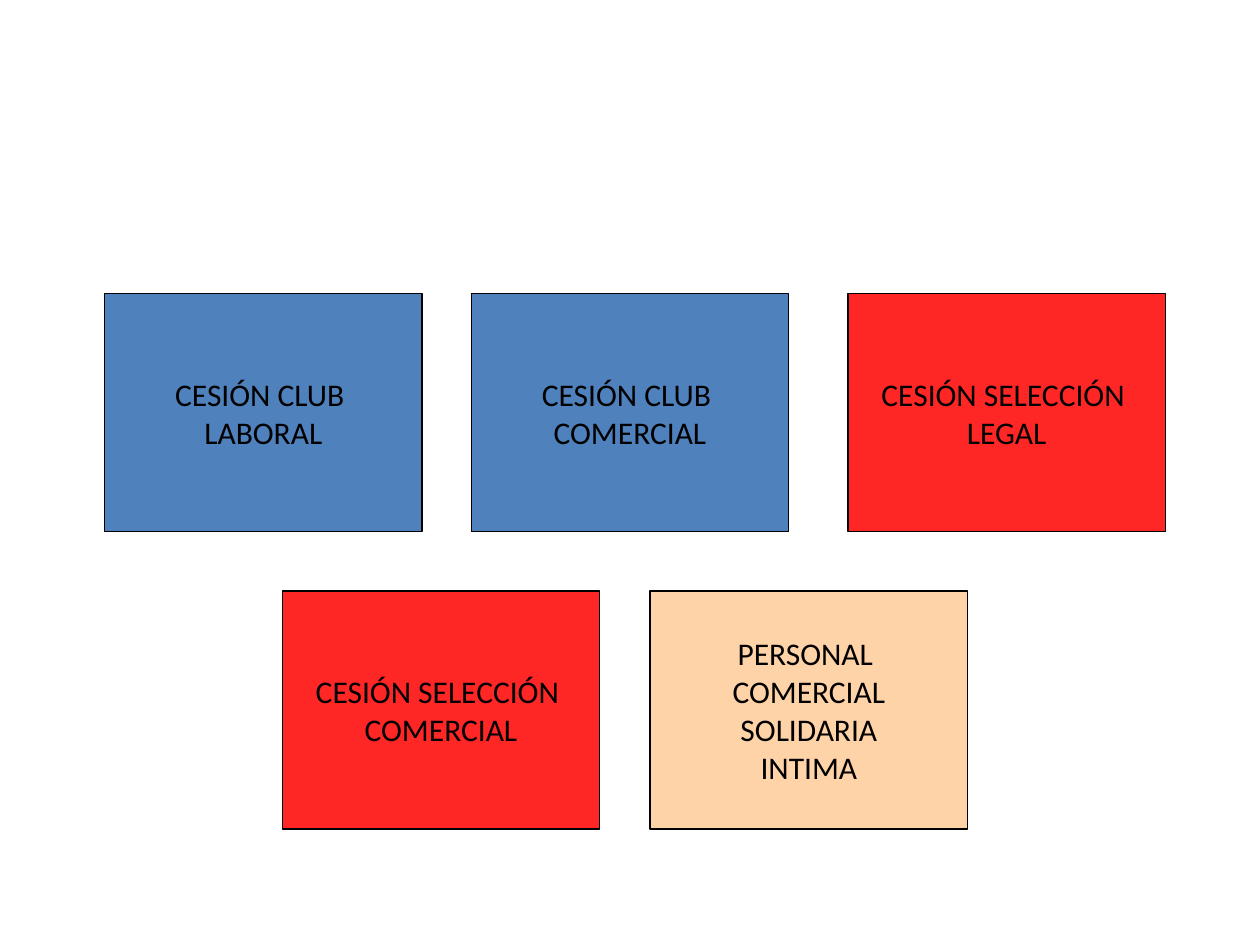
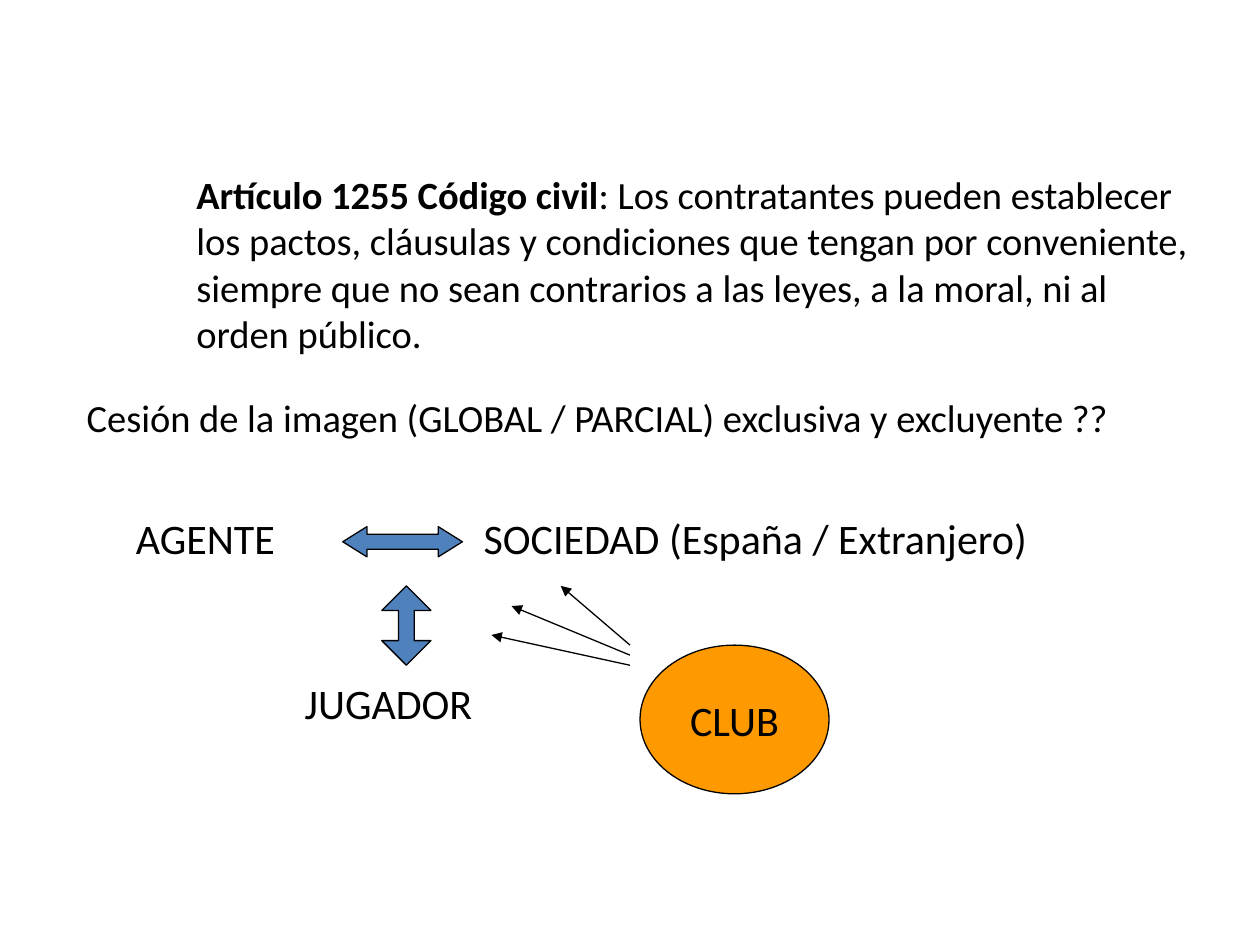
from dataclasses import dataclass

from lxml import etree
from pptx import Presentation
from pptx.dml.color import RGBColor
from pptx.enum import shapes, text
from pptx.oxml import ns
from pptx.util import Inches, Pt


@dataclass(frozen=True)
class Theme:
    font: str = "Calibri"
    ink: str = "000000"
    blue: str = "4F81BD"
    red: str = "FF0000"
    peach: str = "FFCC99"
    orange: str = "FF9900"
    card_size: int = 18
    body_size: int = 22
    label_size: int = 24
    line_width: float = 0.75
    tint_alpha: int = 85


THEME = Theme()
CENTER = text.PP_ALIGN.CENTER
SHAPE = shapes.MSO_SHAPE
CARD_WIDTH, CARD_HEIGHT = 2.52, 1.89


def write(frame, paragraphs, size, align=None):
    """Fill a frame; each paragraph is a list of (text, bold) spans."""
    for index, spans in enumerate(paragraphs):
        para = frame.paragraphs[0] if index == 0 else frame.add_paragraph()
        para.alignment = align
        for words, bold in spans:
            span = para.add_run()
            span.text = words
            font_format = {"name": THEME.font, "size": Pt(size), "bold": bold}
            for key, value in font_format.items():
                setattr(span.font, key, value)
            span.font.color.rgb = RGBColor.from_string(THEME.ink)


def set_outline(item):
    item.line.color.rgb = RGBColor.from_string(THEME.ink)
    item.line.width = Pt(THEME.line_width)


def add_figure(page, kind, box, fill, alpha=100, lines=(), size=THEME.card_size):
    """Add an outlined preset shape with optional centred lines of text."""
    figure = page.shapes.add_shape(kind, *map(Inches, box))
    figure.shadow.inherit = False
    figure.fill.solid()
    figure.fill.fore_color.rgb = RGBColor.from_string(fill)
    if alpha < 100:
        color = figure.fill._xPr.find(f".//{ns.qn('a:srgbClr')}")
        etree.SubElement(color, ns.qn("a:alpha"), val=str(alpha * 1000))
    set_outline(figure)
    if lines:
        frame = figure.text_frame
        frame.word_wrap = False
        frame.vertical_anchor = text.MSO_ANCHOR.MIDDLE
        write(frame, [[(line, False)] for line in lines], size, CENTER)
    return figure


def add_text(page, box, spans, size):
    textbox = page.shapes.add_textbox(*map(Inches, box))
    textbox.text_frame.word_wrap = True
    textbox.text_frame.auto_size = text.MSO_AUTO_SIZE.SHAPE_TO_FIT_TEXT
    write(textbox.text_frame, [spans], size)


def add_arrow(page, start, end):
    arrow = page.shapes.add_connector(
        shapes.MSO_CONNECTOR.STRAIGHT, *map(Inches, (*start, *end)))
    set_outline(arrow)
    etree.SubElement(arrow.line._get_or_add_ln(), ns.qn("a:tailEnd"), type="triangle")
    etree.SubElement(arrow._element.spPr, ns.qn("a:effectLst"))


def add_card_row(page, top, cards):
    for left, fill, alpha, lines in cards:
        add_figure(page, SHAPE.RECTANGLE, (left, top, CARD_WIDTH, CARD_HEIGHT),
                   fill, alpha, lines)


def build_assignments(page):
    tint = THEME.tint_alpha
    add_card_row(page, 2.33, [
        (0.83, THEME.blue, 100, ["CESIÓN CLUB ", "LABORAL"]),
        (3.74, THEME.blue, 100, ["CESIÓN CLUB ", "COMERCIAL"]),
        (6.73, THEME.red, tint, ["CESIÓN SELECCIÓN ", "LEGAL"]),
    ])
    add_card_row(page, 4.69, [
        (2.24, THEME.red, tint, ["CESIÓN SELECCIÓN ", "COMERCIAL"]),
        (5.16, THEME.peach, tint,
         ["PERSONAL ", "COMERCIAL", "SOLIDARIA", "INTIMA"]),
    ])


def add_legal_basis(page, left, top):
    add_text(page, (left + 0.87, top, 8.19, 1.58), [
        ("Artículo 1255 Código civil", True),
        (": Los contratantes pueden establecer los pactos, cláusulas y condiciones "
         "que tengan por conveniente, siempre que no sean contrarios a las leyes, "
         "a la moral, ni al orden público.", False),
    ], THEME.body_size)
    add_text(page, (left, top + 1.77, 9.06, 0.47), [
        ("Cesión de la imagen (GLOBAL / PARCIAL) exclusiva y excluyente ??", False),
    ], THEME.body_size)


def add_parties_diagram(page, left, top):
    parties = [
        ("AGENTE", 0, 0, 2.99),
        ("SOCIEDAD (España / Extranjero)", 2.76, 0, 5.51),
        ("JUGADOR", 1.34, 1.31, 1.89),
    ]
    for name, x, y, width in parties:
        add_text(page, (left + x, top + y, width, 0.5), [(name, False)],
                 THEME.label_size)

    double_arrows = [
        (SHAPE.LEFT_RIGHT_ARROW, (left + 1.74, top + 0.16, 0.95, 0.24), 0.8),
        (SHAPE.UP_DOWN_ARROW, (left + 2.05, top + 0.63, 0.39, 0.63), 0.32),
    ]
    for kind, box, head in double_arrows:
        arrow = add_figure(page, kind, box, THEME.blue)
        arrow.adjustments[0] = 0.5
        arrow.adjustments[1] = head

    add_figure(page, SHAPE.OVAL, (left + 4.1, top + 1.1, 1.5, 1.18), THEME.orange,
               lines=["CLUB"], size=THEME.label_size)
    club_tips = [(2.92, 1.02), (3.08, 0.79), (3.47, 0.63)]
    for index, (x, y) in enumerate(club_tips):
        start = (left + 4.02, top + 1.26 - 0.08 * index)
        add_arrow(page, start, (left + x, top + y))


def build_freedom_of_contract(page):
    add_legal_basis(page, 0.59, 1.31)
    add_parties_diagram(page, 0.98, 4.02)


def main():
    deck = Presentation()
    deck.slide_width, deck.slide_height = Inches(10), Inches(7.5)
    blank = deck.slide_layouts.get_by_name("Blank")
    for build in (build_assignments, build_freedom_of_contract):
        build(deck.slides.add_slide(blank))
    deck.save("out.pptx")


if __name__ == "__main__":
    main()
